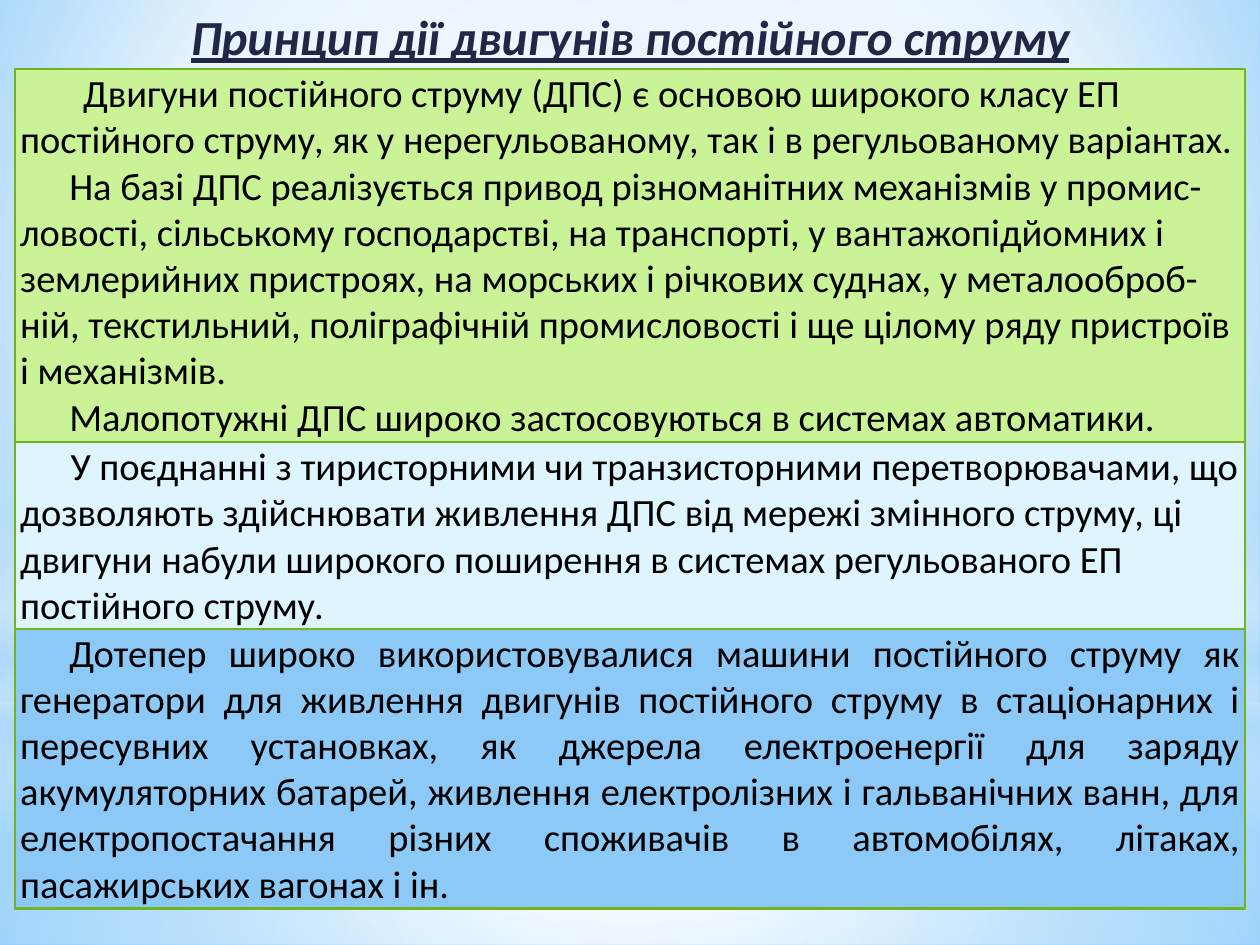
"""Build the slide on the operating principle of direct-current motors."""
from dataclasses import dataclass

from lxml.etree import SubElement
from pptx import Presentation
from pptx.dml.color import RGBColor
from pptx.enum.shapes import MSO_SHAPE
from pptx.enum.text import MSO_ANCHOR, MSO_AUTO_SIZE, PP_ALIGN
from pptx.oxml.ns import qn
from pptx.util import Inches, Pt


@dataclass(frozen=True)
class Theme:
    font: str = "Calibri"
    title_size: int = 28
    body_size: int = 22
    border_width: float = 1.25
    title: str = "212745"
    text: str = "000000"
    border: str = "72B41D"
    green: str = "CAF297"
    pale: str = "DFF5FD"
    blue: str = "8CC9F7"
    white: str = "FFFFFF"
    haze: str = "B4DCFA"
    sky: str = "9ED5FF"
    deep_sky: str = "5BB9FF"


def paint_gradient(fill, owner, stops, focus=None):
    """Fill with (position, colour, opacity) stops, around a focus or downwards."""
    fill.gradient()
    gradient = owner.find(".//" + qn("a:gradFill"))
    for child in list(gradient):
        gradient.remove(child)
    stop_list = SubElement(gradient, qn("a:gsLst"))
    for position, colour, opacity in stops:
        stop = SubElement(stop_list, qn("a:gs"), pos=str(position * 1000))
        tint = SubElement(stop, qn("a:srgbClr"), val=colour)
        if opacity < 100:
            SubElement(tint, qn("a:alpha"), val=str(opacity * 1000))
    if focus:
        circle = SubElement(gradient, qn("a:path"), path="circle")
        edges = {side: str(share * 1000) for side, share in zip("ltrb", focus)}
        SubElement(circle, qn("a:fillToRect"), **edges)
    else:
        SubElement(gradient, qn("a:lin"), ang="5400000", scaled="0")


def set_type(font, size, colour):
    """Apply the common typeface with a size and a colour."""
    font.name = theme.font
    font.size = Pt(size)
    font.color.rgb = RGBColor.from_string(colour)


theme = Theme()
deck = Presentation()
deck.slide_width, deck.slide_height = Inches(10), Inches(7.5)
page = deck.slides.add_slide(deck.slide_layouts[5])

paint_gradient(
    page.background.fill,
    page.element,
    [(0, theme.sky, 100), (60, theme.white, 100), (100, theme.deep_sky, 100)],
    (20, 10, 20, 60),
)

centre = (50, 50, 50, 50)
layers = [
    (MSO_SHAPE.RECTANGLE, 5.58, 1.92, centre,
     [(0, theme.white, 91), (37, theme.white, 76), (100, theme.haze, 79)]),
    (MSO_SHAPE.RECTANGLE, 0, 5.58, centre,
     [(0, theme.white, 89), (48, theme.white, 62), (100, theme.haze, 79)]),
    (MSO_SHAPE.RECTANGLE, 4.12, 2.5, None,
     [(0, theme.white, 0), (29, theme.white, 30), (45, theme.haze, 40),
      (55, theme.white, 26), (65, theme.haze, 60), (100, theme.white, 0)]),
    (MSO_SHAPE.OVAL, 1.75, 5.58, centre,
     [(0, theme.white, 100), (56, theme.white, 0)]),
]
for kind, top, height, focus, stops in layers:
    layer = page.shapes.add_shape(kind, 0, Inches(top), deck.slide_width, Inches(height))
    layer.shadow.inherit = False
    layer.line.fill.background()
    paint_gradient(layer.fill, layer.element, stops, focus)

left, width = Inches(0.12), Inches(9.76)
title = page.shapes.title
title.element.getparent().append(title.element)
title.left, title.top, title.width, title.height = left, 0, width, Inches(0.57)
frame = title.text_frame
frame.text = "Принцип дії двигунів постійного струму"
frame.word_wrap = True
frame.auto_size = MSO_AUTO_SIZE.SHAPE_TO_FIT_TEXT
frame.vertical_anchor = MSO_ANCHOR.TOP
frame.margin_left = frame.margin_right = 0
frame.margin_top = frame.margin_bottom = Inches(0.05)
para = frame.paragraphs[0]
para.alignment = PP_ALIGN.CENTER
set_type(para.font, theme.title_size, theme.title)
para.font.bold = para.font.italic = para.font.underline = True

panels = [
    (theme.green, 2.96, PP_ALIGN.LEFT, [
        (0.5, "Двигуни постійного струму (ДПС) є основою широкого класу ЕП постійного струму, "
              "як у нерегульованому, так і в регульованому варіантах."),
        (0.39, "На базі ДПС реалізується привод різноманітних механізмів у промис-ловості, "
               "сільському господарстві, на транспорті, у вантажопідйомних і землерийних "
               "пристроях, на морських і річкових суднах, у металооброб-ній, текстильний, "
               "поліграфічній промисловості і ще цілому ряду пристроїв і механізмів."),
        (0.39, "Малопотужні ДПС широко застосовуються в системах автоматики."),
    ]),
    (theme.pale, 1.48, PP_ALIGN.LEFT, [
        (0.4, "У поєднанні з тиристорними чи транзисторними перетворювачами, що дозволяють "
              "здійснювати живлення ДПС від мережі змінного струму, ці двигуни набули "
              "широкого поширення в системах регульованого ЕП постійного струму."),
    ]),
    (theme.blue, 2.22, PP_ALIGN.JUSTIFY, [
        (0.39, "Дотепер широко використовувалися машини постійного струму як генератори для "
               "живлення двигунів постійного струму в стаціонарних і пересувних установках, "
               "як джерела електроенергії для заряду акумуляторних батарей, живлення "
               "електролізних і гальванічних ванн, для електропостачання різних споживачів "
               "в автомобілях, літаках, пасажирських вагонах і ін."),
    ]),
]
top = Inches(0.55)
for colour, height, alignment, paragraphs in panels:
    box = page.shapes.add_shape(MSO_SHAPE.RECTANGLE, left, top, width, Inches(height))
    top += box.height
    box.shadow.inherit = False
    box.fill.solid()
    box.fill.fore_color.rgb = RGBColor.from_string(colour)
    box.line.color.rgb = RGBColor.from_string(theme.border)
    box.line.width = Pt(theme.border_width)
    frame = box.text_frame
    frame.word_wrap = True
    frame.auto_size = MSO_AUTO_SIZE.SHAPE_TO_FIT_TEXT
    frame.vertical_anchor = MSO_ANCHOR.TOP
    frame.margin_left = frame.margin_right = Inches(0.04)
    frame.margin_top = frame.margin_bottom = 0
    for index, (indent, text) in enumerate(paragraphs):
        para = frame.add_paragraph() if index else frame.paragraphs[0]
        para.text = text
        para.alignment = alignment
        set_type(para.font, theme.body_size, theme.text)
        properties = para._p.get_or_add_pPr()
        properties.set("marL", "0")
        properties.set("indent", str(Inches(indent)))

deck.save("out.pptx")
